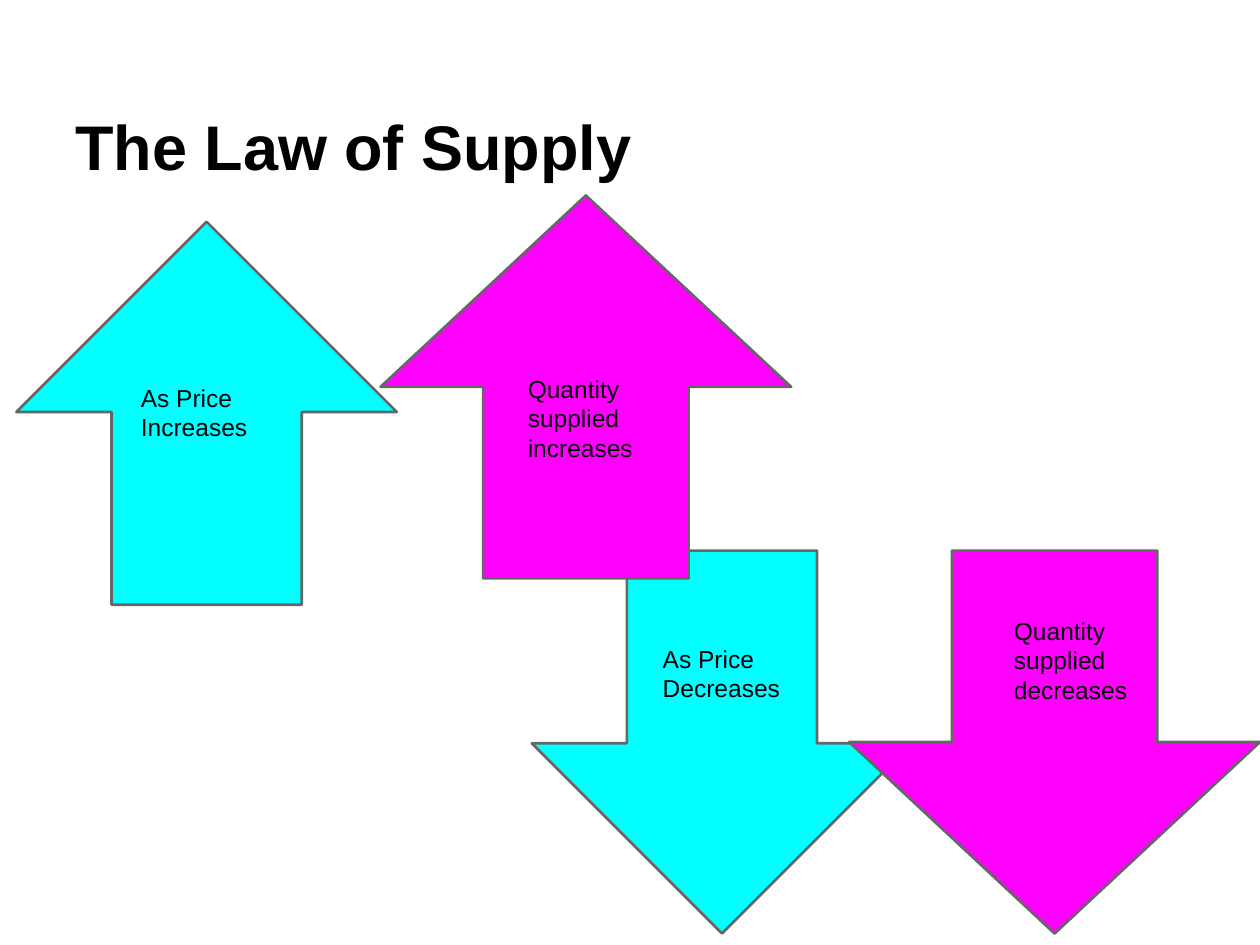
"""Build the Law of Supply slide with paired price and quantity arrows."""
from dataclasses import dataclass

from pptx import Presentation
from pptx.dml.color import RGBColor
from pptx.enum.shapes import MSO_SHAPE as Shape
from pptx.enum.text import MSO_ANCHOR as Anchor
from pptx.util import Cm, Pt


@dataclass(frozen=True)
class Theme:
    font: str = "Arial"
    text: RGBColor = RGBColor(0, 0, 0)
    price: RGBColor = RGBColor(0x00, 0xFF, 0xFF)
    quantity: RGBColor = RGBColor(0xFF, 0x00, 0xFF)
    outline: RGBColor = RGBColor(0x66, 0x66, 0x66)
    title_size: Pt = Pt(36)
    label_size: Pt = Pt(14)
    outline_width: Pt = Pt(1.5)


theme = Theme()


def add_text(slide, text, left, top, width, height, size, bold=False, anchor=Anchor.TOP):
    text_box = slide.shapes.add_textbox(Cm(left), Cm(top), Cm(width), Cm(height))
    frame = text_box.text_frame
    frame.word_wrap = True
    frame.vertical_anchor = anchor
    frame.margin_left = frame.margin_right = Cm(0.25)
    frame.margin_top = frame.margin_bottom = Cm(0.25)
    run = frame.paragraphs[0].add_run()
    run.text = text
    run.font.name = theme.font
    run.font.size = size
    run.font.bold = bold
    run.font.color.rgb = theme.text


presentation = Presentation()
presentation.slide_width = Cm(25.4)
presentation.slide_height = Cm(19.05)
slide = presentation.slides.add_slide(presentation.slide_layouts[6])

add_text(slide, "The Law of Supply", 1.27, 0.76, 22.86, 3.18,
         theme.title_size, bold=True, anchor=Anchor.BOTTOM)

arrow_height = 7.72
price_width, quantity_width = 7.67, 8.28
arrows = [
    (10.72, 11.1, price_width, theme.price, 0),
    (17.12, 11.1, quantity_width, theme.quantity, 0),
    (0.33, 4.47, price_width, theme.price, 180),
    (7.67, 3.94, quantity_width, theme.quantity, 180),
]
for left, top, width, color, rotation in arrows:
    arrow = slide.shapes.add_shape(
        Shape.DOWN_ARROW, Cm(left), Cm(top), Cm(width), Cm(arrow_height))
    arrow.rotation = rotation
    arrow.shadow.inherit = False
    arrow.fill.solid()
    arrow.fill.fore_color.rgb = color
    arrow.line.color.rgb = theme.outline
    arrow.line.width = theme.outline_width

labels = [
    ("As Price Increases", 2.59, 7.47, 2.87, 1.45),
    ("Quantity supplied increases", 10.39, 7.29, 2.87, 2.08),
    ("As Price Decreases", 13.11, 12.73, 3.07, 1.45),
    ("Quantity supplied decreases", 20.19, 12.17, 2.87, 2.08),
]
for text, left, top, width, height in labels:
    add_text(slide, text, left, top, width, height, theme.label_size)

presentation.save("out.pptx")
